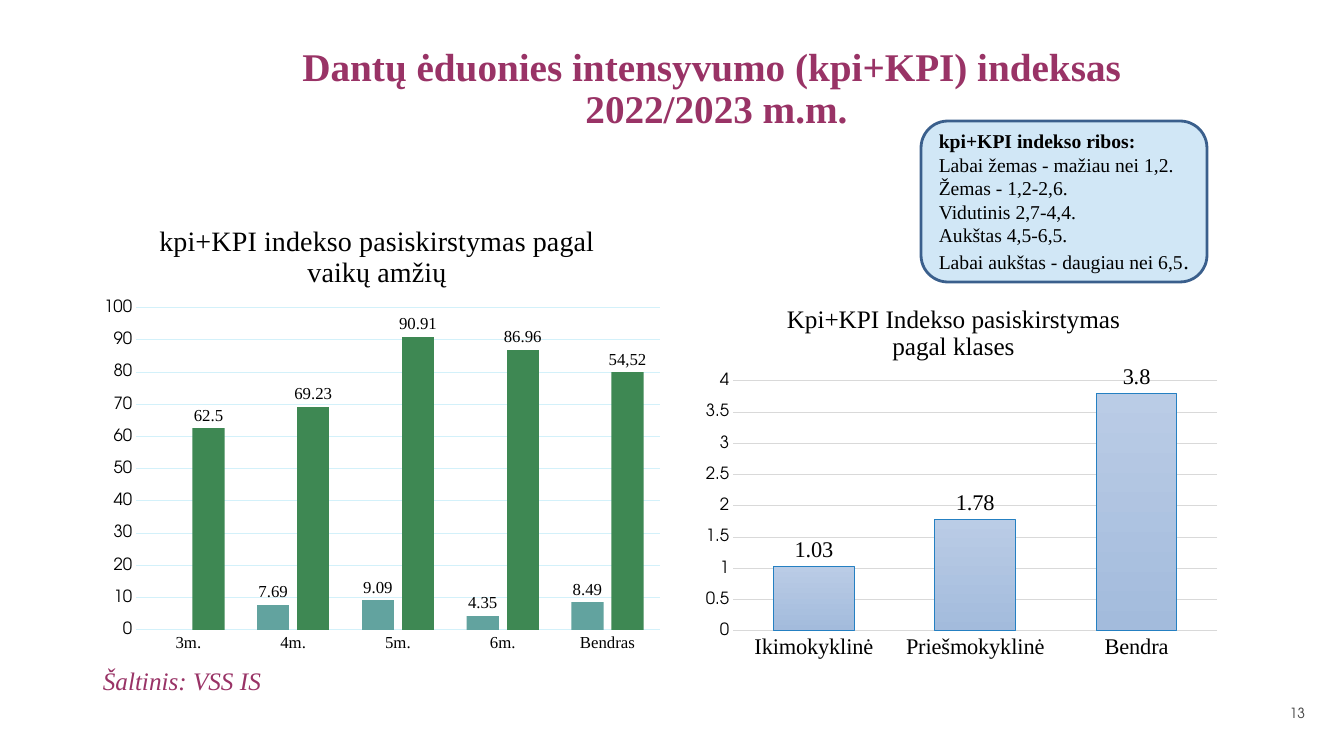
from lxml import etree
from pptx import Presentation
from pptx.chart.data import CategoryChartData
from pptx.dml.color import RGBColor
from pptx.enum.chart import XL_CHART_TYPE, XL_LABEL_POSITION, XL_TICK_MARK
from pptx.enum.shapes import MSO_SHAPE
from pptx.enum.text import MSO_ANCHOR, PP_ALIGN
from pptx.oxml import parse_xml
from pptx.util import Emu, Pt

COLUMNS = XL_CHART_TYPE.COLUMN_CLUSTERED
OUTSIDE = XL_LABEL_POSITION.OUTSIDE_END
NO_TICKS = XL_TICK_MARK.NONE
ROUNDED = MSO_SHAPE.ROUNDED_RECTANGLE
MIDDLE, BOTTOM, TOP = MSO_ANCHOR.MIDDLE, MSO_ANCHOR.BOTTOM, MSO_ANCHOR.TOP
LEFT, CENTER, RIGHT = PP_ALIGN.LEFT, PP_ALIGN.CENTER, PP_ALIGN.RIGHT

# Content; boxes are (left, top, width, height) in px
HEADLINE = "Dantų ėduonies intensyvumo (kpi+KPI) indeksas \v2022/2023 m.m."
SOURCE = "Šaltinis: VSS IS"
PAGE = "13"
LIMITS = [
    "kpi+KPI indekso ribos:",
    "Labai žemas - mažiau nei 1,2.",
    "Žemas - 1,2-2,6.",
    "Vidutinis 2,7-4,4.",
    "Aukštas 4,5-6,5.",
    "Labai aukštas - daugiau nei 6,5",
]
CHARTS = [
    dict(
        title="kpi+KPI indekso pasiskirstymas pagal\nvaikų amžių",
        box=(93, 202, 575, 460), plot=(136, 308, 524, 322), title_at=(156, 221),
        categories=["3m.", "4m.", "5m.", "6m.", "Bendras"],
        series=[[None, 7.69, 9.09, 4.35, 8.49], [62.5, 69.23, 90.91, 86.96, 80]],
        custom_labels={(1, 4): "54,52"},
        top=100, step=10, title_size=20, label_size=12, grid="D3F1FA",
        fills=[("62A39F", "60A39F"), ("3E8853", "3C8951")], outline=None,
    ),
    dict(
        title="Kpi+KPI Indekso pasiskirstymas\npagal klases",
        box=(696, 281, 532, 388), plot=(733, 381, 484, 250), title_at=(784, 301),
        categories=["Ikimokyklinė", "Priešmokyklinė", "Bendra"],
        series=[[1.03, 1.78, 3.8]],
        custom_labels={},
        top=4, step=0.5, title_size=18, label_size=16, grid="D9D9D9",
        fills=[("BACCE6", "A3BBDC")], outline="2580C2",
    ),
]

THEME = dict(
    serif="Times New Roman", sans="TeX Gyre Adventor",
    accent="993366", text="000000", muted="404040",
    panel="D1E7F6", panel_line="3A5F8C",
    headline=28, source=18, limits=14, full_stop=16, axis=12, page=10,
)


def px(length):
    return Emu(round(length * 914400 / 100.8))


def rgb(name):
    return RGBColor.from_string(THEME.get(name, name))


def style(font, size, color="text", face="serif", bold=False, italic=False):
    font.name, font.size = THEME[face], Pt(size)
    font.bold, font.italic = bold, italic
    font.color.rgb = rgb(color)


def add_text(slide, box, text, size, color, align, anchor, wrap=True, **look):
    frame = slide.shapes.add_textbox(*map(px, box)).text_frame
    frame.word_wrap, frame.vertical_anchor = wrap, anchor
    paragraph = frame.paragraphs[0]
    paragraph.text, paragraph.alignment = text, align
    for run in paragraph.runs:
        style(run.font, size, color, **look)
    return paragraph


def place(parent, spec_box, chart_box, inner=False):
    """Pin a title or plot area at its share of the chart's box."""
    left, top, width, height = chart_box
    shares = [(spec_box[0] - left) / width, (spec_box[1] - top) / height]
    shares += [length / side for length, side in zip(spec_box[2:], (width, height))]
    values = [("layoutTarget", "inner")] if inner else []
    values += [("xMode", "edge"), ("yMode", "edge")]
    values += [(name, f"{share:.3f}") for name, share in zip("xywh", shares)]
    body = "".join(f'<c:{name} val="{value}"/>' for name, value in values)
    layout = parse_xml(
        '<c:layout xmlns:c="http://schemas.openxmlformats.org/drawingml/2006/chart">'
        f"<c:manualLayout>{body}</c:manualLayout></c:layout>")
    for child in list(parent):
        if etree.QName(child).localname == "layout":
            parent.remove(child)
    first = etree.QName(parent[0]).localname
    parent.insert(1 if first == "tx" else 0, layout)


def style_axis(axis, size, face):
    axis.major_tick_mark = axis.minor_tick_mark = NO_TICKS
    style(axis.tick_labels.font, size, face=face)


def add_columns(slide, content):
    data = CategoryChartData()
    data.categories = content["categories"]
    for number, values in enumerate(content["series"], 1):
        data.add_series(f"Series {number}", values)
    chart = slide.shapes.add_chart(COLUMNS, *map(px, content["box"]), data).chart
    chart.has_legend = False
    style(chart.font, 10, face="sans")

    # Title
    chart.has_title = True
    title = chart.chart_title
    title.include_in_layout = False
    title.text_frame.text = content["title"]
    for paragraph in title.text_frame.paragraphs:
        paragraph.alignment = CENTER
        for run in paragraph.runs:
            style(run.font, content["title_size"])

    # Axes
    category, value = chart.category_axis, chart.value_axis
    style_axis(category, content["label_size"], "serif")
    style_axis(value, THEME["axis"], "sans")
    value.minimum_scale, value.maximum_scale = 0, content["top"]
    value.major_unit = content["step"]
    value.format.line.fill.background()
    for line in (category.format.line, value.major_gridlines.format.line):
        line.color.rgb, line.width = rgb(content["grid"]), Pt(0.75)

    # Columns and their labels
    plot = chart.plots[0]
    plot.gap_width, plot.overlap, plot.vary_by_categories = 100, -24, False
    for series, colors in zip(plot.series, content["fills"]):
        fill = series.format.fill
        fill.gradient()
        fill.gradient_angle = 270
        for stop, color in zip(fill.gradient_stops, colors):
            stop.color.rgb = rgb(color)
        if content["outline"]:
            series.format.line.color.rgb = rgb(content["outline"])
            series.format.line.width = Pt(0.75)
        labels = series.data_labels
        labels.show_value, labels.position = True, OUTSIDE
        style(labels.font, content["label_size"])
    for (series_index, point_index), text in content["custom_labels"].items():
        label = plot.series[series_index].points[point_index].data_label
        label.text_frame.text = text
        label.position = OUTSIDE
        style(label.text_frame.paragraphs[0].runs[0].font, content["label_size"])

    place(title._element, content["title_at"], content["box"])
    place(chart._chartSpace.chart.plotArea, content["plot"], content["box"], inner=True)


def add_limits(slide):
    panel = slide.shapes.add_shape(ROUNDED, *map(px, (921, 121, 286, 161)))
    panel.shadow.inherit = False
    panel.fill.solid()
    panel.fill.fore_color.rgb = rgb("panel")
    panel.line.color.rgb, panel.line.width = rgb("panel_line"), Pt(2)
    frame = panel.text_frame
    frame.word_wrap, frame.vertical_anchor = True, MIDDLE
    frame.text = "\n".join(LIMITS)
    for index, paragraph in enumerate(frame.paragraphs):
        paragraph.alignment = LEFT
        style(paragraph.runs[0].font, THEME["limits"], bold=index == 0)
    full_stop = frame.paragraphs[-1].add_run()
    full_stop.text = "."
    style(full_stop.font, THEME["full_stop"])


def main():
    deck = Presentation()
    deck.slide_width, deck.slide_height = px(1344), px(756)
    slide = deck.slides.add_slide(deck.slide_layouts[6])

    headline = add_text(slide, (225, 19, 983, 141), HEADLINE, THEME["headline"],
                        "accent", CENTER, MIDDLE, bold=True)
    headline.line_spacing = 0.9
    for content in CHARTS:
        add_columns(slide, content)
    add_limits(slide)
    add_text(slide, (93, 660, 180, 40), SOURCE, THEME["source"],
             "accent", LEFT, TOP, wrap=False, italic=True)
    add_text(slide, (1154, 696, 161, 30), PAGE, THEME["page"],
             "muted", RIGHT, BOTTOM, face="sans")
    deck.save("out.pptx")


if __name__ == "__main__":
    main()
